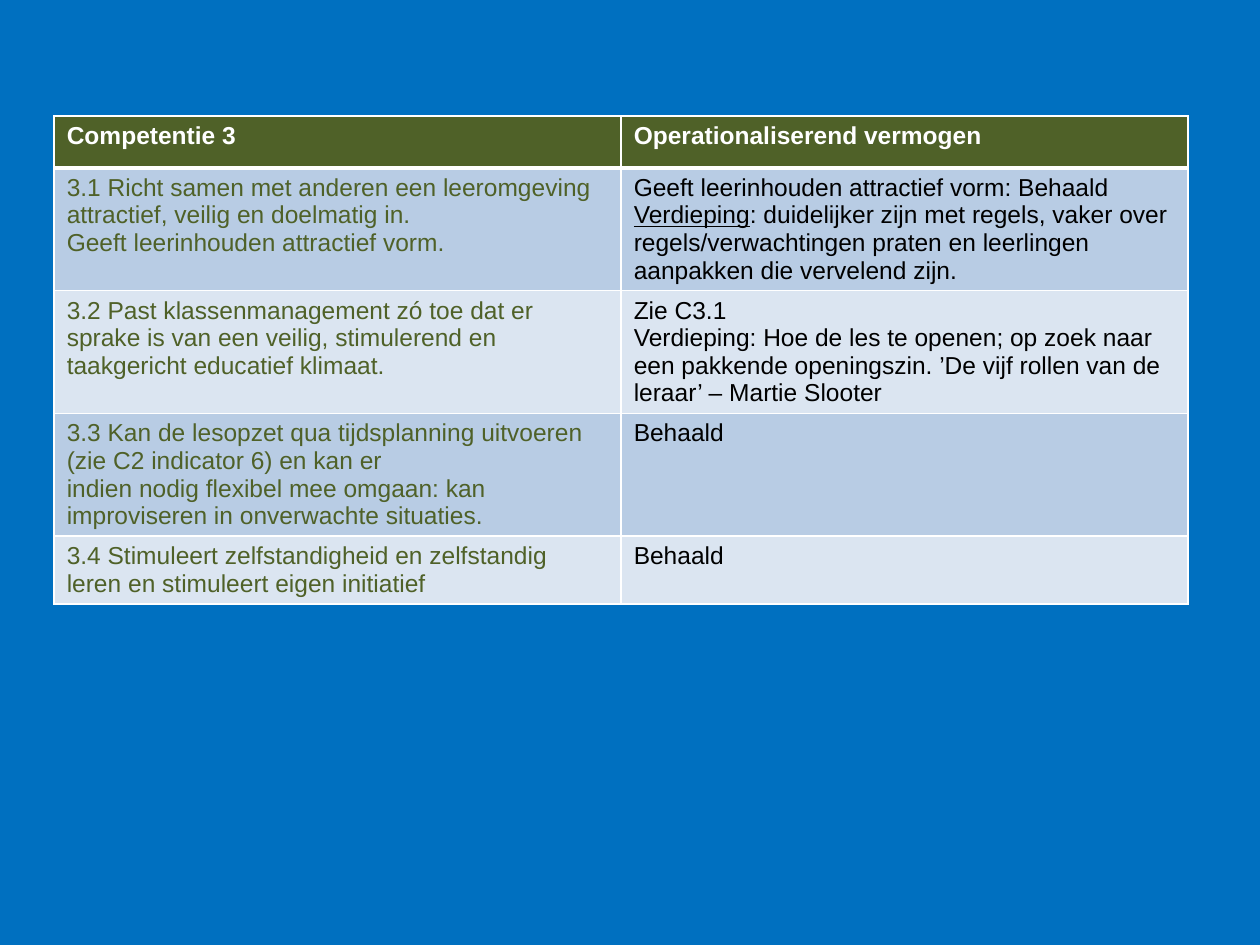
import dataclasses

import lxml.etree
import pptx
import pptx.dml.color
import pptx.oxml.ns
import pptx.util


@dataclasses.dataclass(frozen=True)
class Theme:
    background: str = "0070C0"
    header: str = "4F6128"
    bands: tuple = ("B8CCE4", "DBE5F1")
    indicator: str = "4F6128"
    result: str = "000000"
    white: str = "FFFFFF"
    font: str = "Arial"
    size: int = 14
    border: int = 1
    header_border: int = 3


THEME = Theme()
SLIDE_WIDTH, SLIDE_HEIGHT = 10, 7.5
TABLE_BOX = (0.043, 0.123, 0.9, 0.516)  # shares of the slide's size
ROW_HEIGHTS = (0.41, 0.97, 0.97, 0.97, 0.54)

HEADINGS = ("Competentie 3", "Operationaliserend vermogen")

# Each cell is a list of paragraphs; each paragraph is a list of (text, underlined) runs
COMPETENCES = [
    ([[("3.1 Richt samen met anderen een leeromgeving attractief, veilig en doelmatig in.", False)],
      [("Geeft leerinhouden attractief vorm.", False)]],
     [[("Geeft leerinhouden attractief vorm: Behaald", False)],
      [("Verdieping", True),
       (": duidelijker zijn met regels, vaker over regels/verwachtingen praten "
        "en leerlingen aanpakken die vervelend zijn.", False)]]),
    ([[("3.2 Past klassenmanagement zó toe dat er sprake is van een veilig, stimulerend en", False)],
      [("taakgericht educatief klimaat.", False)]],
     [[("Zie C3.1", False)],
      [("Verdieping: Hoe de les te openen; op zoek naar een pakkende openingszin. "
        "’De vijf rollen van de leraar’ – Martie Slooter", False)]]),
    ([[("3.3 Kan de lesopzet qua tijdsplanning uitvoeren (zie C2 indicator 6) en kan er", False)],
      [("indien nodig flexibel mee omgaan: kan improviseren in onverwachte situaties.", False)]],
     [[("Behaald", False)]]),
    ([[("3.4 Stimuleert zelfstandigheid en zelfstandig leren en stimuleert eigen initiatief", False)]],
     [[("Behaald", False)]]),
]


def rgb(value):
    return pptx.dml.color.RGBColor.from_string(value)


def set_borders(cell, widths):
    """Draw white cell borders, with widths in points for left, right, top, bottom."""
    properties = cell._tc.get_or_add_tcPr()
    qn = pptx.oxml.ns.qn
    for index, (side, width) in enumerate(zip("LRTB", widths)):
        line = lxml.etree.Element(qn(f"a:ln{side}"), w=str(pptx.util.Pt(width)))
        fill = lxml.etree.SubElement(line, qn("a:solidFill"))
        lxml.etree.SubElement(fill, qn("a:srgbClr"), val=THEME.white)
        properties.insert(index, line)


def fill_cell(cell, paragraphs, fill, color, bold=False):
    cell.fill.solid()
    cell.fill.fore_color.rgb = rgb(fill)
    cell.margin_left = cell.margin_right = pptx.util.Inches(0.1)
    cell.margin_top = cell.margin_bottom = pptx.util.Inches(0.05)
    text_frame = cell.text_frame
    for index, runs in enumerate(paragraphs):
        paragraph = text_frame.add_paragraph() if index else text_frame.paragraphs[0]
        for text, underlined in runs:
            run = paragraph.add_run()
            run.text = text
            run.font.name = THEME.font
            run.font.size = pptx.util.Pt(THEME.size)
            run.font.bold = bold
            run.font.underline = underlined
            run.font.color.rgb = rgb(color)


def add_competence_table(slide, box):
    left, top, width, height = (
        pptx.util.Inches(share * length)
        for share, length in zip(box, (SLIDE_WIDTH, SLIDE_HEIGHT) * 2))
    table = slide.shapes.add_table(
        len(ROW_HEIGHTS), len(HEADINGS), left, top, width, height).table
    for row, row_height in zip(table.rows, ROW_HEIGHTS):
        row.height = pptx.util.Inches(row_height)

    # Header row, with a thick rule below
    thin, thick = THEME.border, THEME.header_border
    for column, heading in enumerate(HEADINGS):
        cell = table.cell(0, column)
        fill_cell(cell, [[(heading, False)]], THEME.header, THEME.white, bold=True)
        set_borders(cell, (thin, thin, thin, thick))

    # Competence rows in alternating bands
    for row, contents in enumerate(COMPETENCES, start=1):
        band = THEME.bands[(row - 1) % len(THEME.bands)]
        for column, color in enumerate((THEME.indicator, THEME.result)):
            cell = table.cell(row, column)
            fill_cell(cell, contents[column], band, color)
            set_borders(cell, (thin, thin, thick if row == 1 else thin, thin))


def main():
    presentation = pptx.Presentation()
    presentation.slide_width = pptx.util.Inches(SLIDE_WIDTH)
    presentation.slide_height = pptx.util.Inches(SLIDE_HEIGHT)
    slide = presentation.slides.add_slide(presentation.slide_layouts.get_by_name("Blank"))
    slide.background.fill.solid()
    slide.background.fill.fore_color.rgb = rgb(THEME.background)
    add_competence_table(slide, TABLE_BOX)
    presentation.save("out.pptx")


if __name__ == "__main__":
    main()
